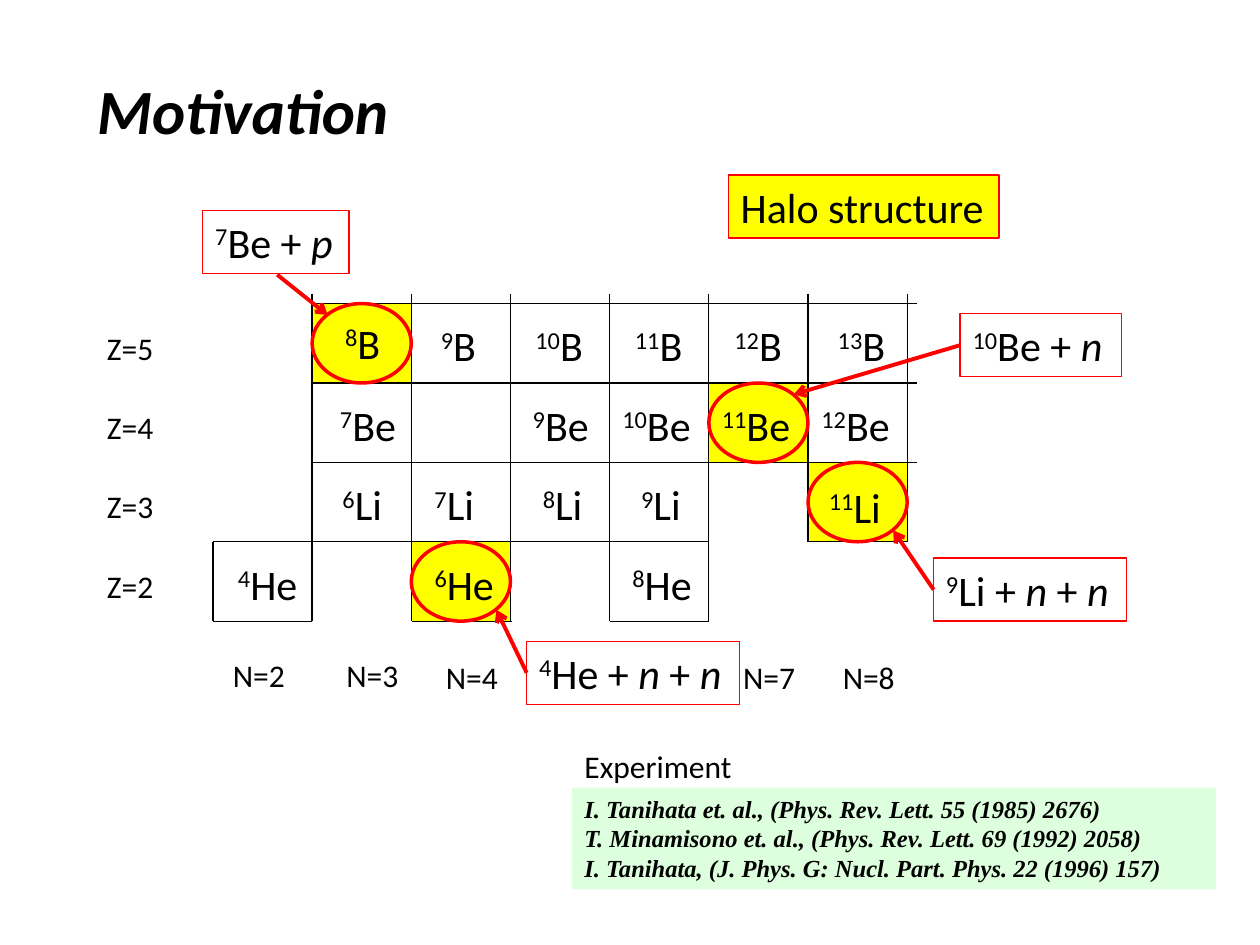
"""Build the Motivation slide: a nuclide chart that marks halo nuclei."""
from pptx import Presentation
from pptx.dml.color import RGBColor
from pptx.enum.shapes import MSO_CONNECTOR, MSO_SHAPE
from pptx.enum.text import MSO_ANCHOR, MSO_AUTO_SIZE, PP_ALIGN
from pptx.oxml.ns import qn
from pptx.util import Inches, Pt
from lxml.etree import SubElement

BLACK = RGBColor(0, 0, 0)
WHITE = RGBColor(255, 255, 255)
RED = RGBColor(255, 0, 0)
YELLOW = RGBColor(255, 255, 0)
PALE_GREEN = RGBColor(0xDD, 0xFF, 0xDD)

GRID_LEFT, CELL_WIDTH = 1.69, 5.51 / 7
HELIUM_TOP, CELL_HEIGHT = 4.3, 0.63
LABEL_DROP = 0.08

HALO_CELLS = [(3, 5), (4, 2), (7, 4), (8, 3)]
ELEMENTS = [
    ("B", 5, 0.5, {8: 2.64, 9: 3.4, 10: 4.15, 11: 4.94, 12: 5.73, 13: 6.55}),
    ("Be", 4, 0.67, {7: 2.6, 9: 4.13, 10: 4.84, 11: 5.63, 12: 6.42}),
    ("Li", 3, 0.54, {6: 2.62, 7: 3.35, 8: 4.21, 9: 4.99, 11: 6.48}),
    ("He", 2, 0.69, {4: 1.79, 6: 3.35, 8: 4.92}),
]
LABEL_SHIFTS = {"8B": -0.02, "11Li": 0.02}
NEUTRON_LABELS = {2: (1.75, 5.16), 3: (2.65, 5.16), 4: (3.44, 5.17), 7: (5.8, 5.17), 8: (6.59, 5.17)}
ROW_LINES = [
    (2.41, 2.48, 7.28), (3.04, 2.48, 7.28), (3.67, 2.48, 7.28),
    (4.3, 1.69, 5.63), (4.3, 6.42, 7.2),
    (4.93, 1.69, 2.48), (4.93, 3.27, 4.06), (4.93, 4.84, 5.63),
]
CLUSTERS = [
    (("7", "Be + ", "p"), (1.61, 1.67, 1.16, 0.5), (2.2, 2.18, 2.6, 2.5), None),
    (("10", "Be + ", "n"), (7.62, 2.49, 1.28, 0.5), (7.62, 2.74, 6.3, 3.13), None),
    (("9", "Li + ", "n", " + ", "n"), (7.41, 4.43, 1.53, 0.5), (7.41, 4.68, 7.09, 4.21), None),
    (("4", "He + ", "n", " + ", "n"), (4.18, 5.09, 1.69, 0.5), (4.18, 5.34, 3.94, 4.84), WHITE),
]
REFERENCES = [
    "I. Tanihata et. al., (Phys. Rev. Lett. 55 (1985) 2676)",
    "T. Minamisono et. al., (Phys. Rev. Lett. 69 (1992) 2058)",
    "I. Tanihata, (J. Phys. G: Nucl. Part. Phys. 22 (1996) 157)",
]


def column_left(neutrons):
    return GRID_LEFT + CELL_WIDTH * (neutrons - 2)


def row_top(protons):
    return HELIUM_TOP - CELL_HEIGHT * (protons - 2)


def cell_box(neutrons, protons):
    return column_left(neutrons), row_top(protons), CELL_WIDTH, CELL_HEIGHT


class SlideBuilder:
    """Holds the slide and its text style."""

    def __init__(self, slide, font_name="Calibri"):
        self.slide = slide
        self.font_name = font_name

    def format_frame(self, frame, wrap=False):
        frame.word_wrap = wrap
        frame.auto_size = MSO_AUTO_SIZE.SHAPE_TO_FIT_TEXT
        frame.vertical_anchor = MSO_ANCHOR.TOP

    def format_paragraph(self, paragraph, size, strong=False, font_name=None):
        paragraph.alignment = PP_ALIGN.LEFT
        font = paragraph.font
        font.name = font_name or self.font_name
        font.size = Pt(size)
        font.color.rgb = BLACK
        if strong:
            font.bold = font.italic = True

    def title(self, text, box):
        shape = self.slide.shapes.title
        shape.left, shape.top, shape.width, shape.height = map(Inches, box)
        shape.text_frame.text = text
        self.format_frame(shape.text_frame)
        self.format_paragraph(shape.text_frame.paragraphs[0], 36, strong=True)

    def shape(self, kind, box, fill=None, line=None, line_width=0.75):
        shape = self.slide.shapes.add_shape(kind, *map(Inches, box))
        shape.shadow.inherit = False
        if fill is None:
            shape.fill.background()
        else:
            shape.fill.solid()
            shape.fill.fore_color.rgb = fill
        if line is None:
            shape.line.fill.background()
        else:
            shape.line.color.rgb = line
            shape.line.width = Pt(line_width)
        return shape

    def text(self, text, box, size=18):
        frame = self.slide.shapes.add_textbox(*map(Inches, box)).text_frame
        self.format_frame(frame)
        frame.text = text
        self.format_paragraph(frame.paragraphs[0], size)

    def fill_nuclide(self, frame, parts):
        self.format_frame(frame)
        paragraph = frame.paragraphs[0]
        self.format_paragraph(paragraph, 24)
        for index, part in enumerate(parts):
            run = paragraph.add_run()
            run.text = part
            if index == 0:
                run._r.get_or_add_rPr().set("baseline", "30000")
            if part in ("n", "p"):
                run.font.italic = True

    def nuclide(self, parts, box):
        self.fill_nuclide(self.slide.shapes.add_textbox(*map(Inches, box)).text_frame, parts)

    def cluster(self, parts, box, fill):
        self.fill_nuclide(self.shape(MSO_SHAPE.RECTANGLE, box, fill, RED).text_frame, parts)

    def banner(self, text, box):
        frame = self.shape(MSO_SHAPE.RECTANGLE, box, YELLOW, RED).text_frame
        self.format_frame(frame)
        frame.text = text
        self.format_paragraph(frame.paragraphs[0], 24)

    def references(self, lines, box):
        frame = self.shape(MSO_SHAPE.RECTANGLE, box, PALE_GREEN).text_frame
        self.format_frame(frame, wrap=True)
        frame.text = "\n".join(lines)
        for paragraph in frame.paragraphs:
            self.format_paragraph(paragraph, 14, strong=True, font_name="Times New Roman")

    def line(self, ends, color=BLACK, width=0.75, arrow=False):
        connector = self.slide.shapes.add_connector(MSO_CONNECTOR.STRAIGHT, *map(Inches, ends))
        connector.line.color.rgb = color
        connector.line.width = Pt(width)
        if arrow:
            SubElement(connector.line._get_or_add_ln(), qn("a:tailEnd"), type="arrow")
        SubElement(connector._element.spPr, qn("a:effectLst"))


def main():
    presentation = Presentation()
    presentation.slide_width, presentation.slide_height = Inches(10), Inches(7.5)
    builder = SlideBuilder(presentation.slides.add_slide(presentation.slide_layouts[5]))

    builder.title("Motivation", (0.67, 0.52, 2.55, 0.71))
    builder.banner("Halo structure", (5.78, 1.39, 2.15, 0.5))
    for cell in HALO_CELLS:
        builder.shape(MSO_SHAPE.RECTANGLE, cell_box(*cell), YELLOW)

    for symbol, protons, width, lefts in ELEMENTS:
        builder.text(f"Z={protons}", (0.75, row_top(protons) + 0.15, 0.57, 0.4))
        for mass, left in lefts.items():
            top = row_top(protons) + LABEL_DROP + LABEL_SHIFTS.get(f"{mass}{symbol}", 0)
            label_width = width + (0.11 if mass > 9 else 0)
            builder.nuclide((str(mass), symbol), (left, top, label_width, 0.5))
    for neutrons, (left, top) in NEUTRON_LABELS.items():
        builder.text(f"N={neutrons}", (left, top, 0.62, 0.4))

    for top, left, right in ROW_LINES:
        builder.line((left, top, right, top))
    builder.line((GRID_LEFT, 4.3, GRID_LEFT, 4.93))
    for neutrons in range(3, 10):
        left = column_left(neutrons)
        builder.line((left, 2.33, left, 4.93 if neutrons < 8 else 4.3))

    for cell in HALO_CELLS:
        builder.shape(MSO_SHAPE.OVAL, cell_box(*cell), line=RED, line_width=2)
    for parts, box, arrow_ends, fill in CLUSTERS:
        builder.cluster(parts, box, fill)
        builder.line(arrow_ends, RED, 2.25, arrow=True)

    builder.text("Experiment", (4.54, 5.88, 1.38, 0.4))
    builder.references(REFERENCES, (4.54, 6.25, 5.11, 0.81))
    presentation.save("out.pptx")


if __name__ == "__main__":
    main()
